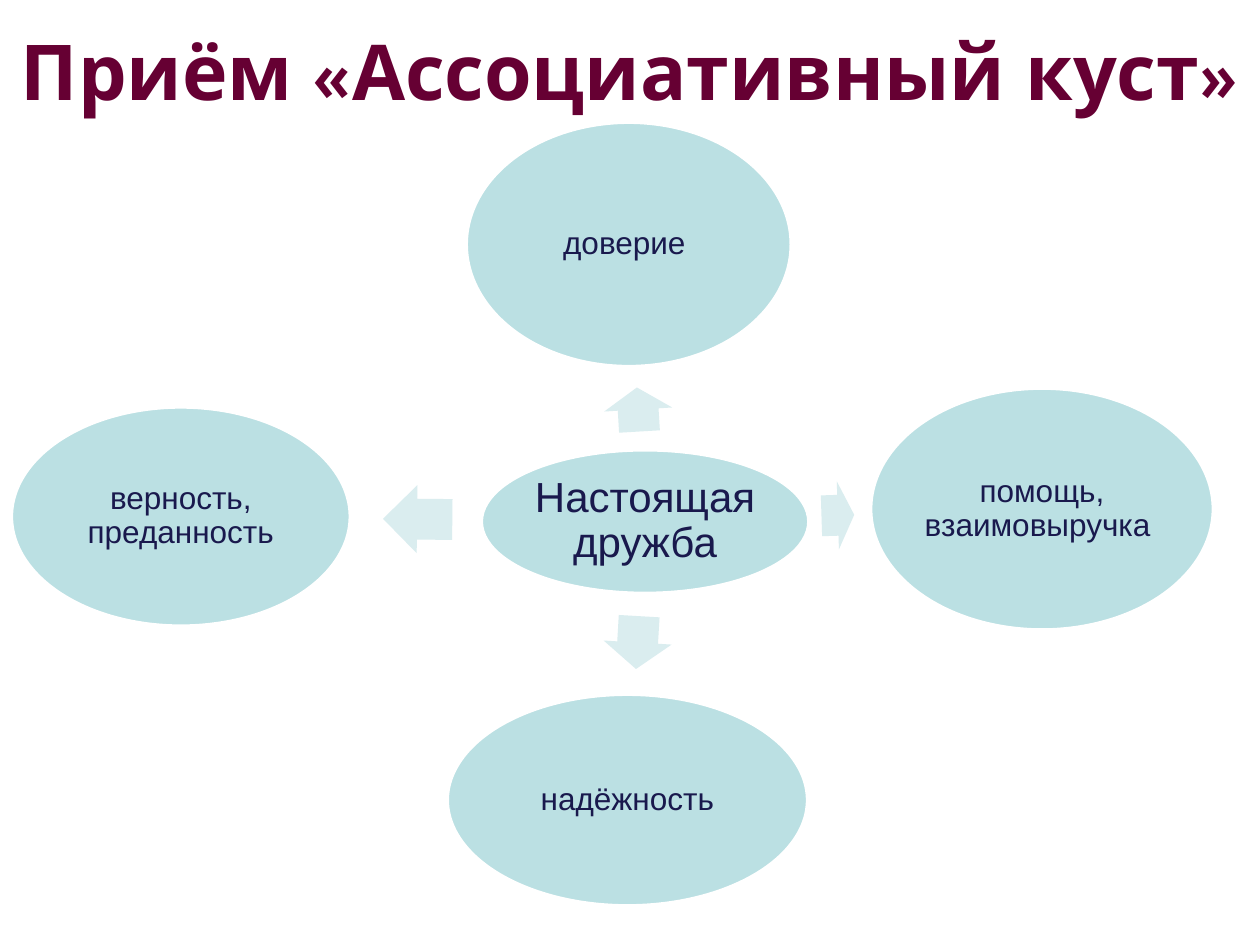
import pptx
import pptx.util
import pptx.dml.color
import pptx.enum.shapes
import pptx.enum.text

PX = 9144
KIND = pptx.enum.shapes.MSO_SHAPE
MID = pptx.enum.text.MSO_ANCHOR.MIDDLE
CENTER = pptx.enum.text.PP_ALIGN.CENTER

HUB = ("Настоящая дружба", (373, 260, 260, 114))
RAYS = [
    ("доверие ", (361, 0, 258, 194), (480, 201, 35, 54), 266.6),
    ("помощь, взаимовыручка ", (682, 211, 272, 192), (643, 285, 26, 54), 358.2),
    ("надёжность", (346, 454, 286, 168), (476, 386, 42, 54), 93.4),
    ("верность, преданность", (0, 226, 269, 174), (295, 288, 55, 54), 180.6),
]


def px(*nums):
    return [pptx.util.Emu(num * PX) for num in nums]


def tint(code):
    return pptx.dml.color.RGBColor.from_string(code)


def style(para, face, size, code, bold=False):
    para.alignment = CENTER
    for run in para.runs:
        font = run.font
        font.name, font.size, font.bold = face, pptx.util.Pt(size), bold
        font.color.rgb = tint(code)


def add_part(group, kind, box, spot, fill):
    left, top, wide, high = spot
    part = group.shapes.add_shape(
        kind, *px(box[0] + left, box[1] + top, wide, high))
    part.shadow.inherit = False
    part.fill.solid()
    part.fill.fore_color.rgb = tint(fill)
    return part


def add_oval(group, box, spot, text, size):
    oval = add_part(group, KIND.OVAL, box, spot, "BBE0E3")
    oval.line.color.rgb = tint("FFFFFF")
    oval.line.width = pptx.util.Pt(2)
    frame = oval.text_frame
    frame.word_wrap = True
    frame.vertical_anchor = MID
    frame.margin_left, frame.margin_right = px(3, 3)
    frame.margin_top, frame.margin_bottom = px(3, 3)
    frame.text = text
    para = frame.paragraphs[0]
    para.line_spacing = 0.9
    style(para, "Arial", size, "19194D")


def add_arrow(group, box, spot, turn):
    arrow = add_part(group, KIND.RIGHT_ARROW, box, spot, "DAEDEF")
    arrow.line.fill.background()
    arrow.adjustments[0] = 0.6
    arrow.adjustments[1] = 0.5
    arrow.rotation = turn


def add_title(slide, box):
    title = slide.shapes.title
    title.left, title.top, title.width, title.height = px(*box)
    frame = title.text_frame
    frame.word_wrap = True
    frame.auto_size = pptx.enum.text.MSO_AUTO_SIZE.NONE
    frame.vertical_anchor = MID
    frame.text = "Приём «Ассоциативный куст»"
    style(frame.paragraphs[0], "League Spartan", 44, "660033", True)


def add_bush(slide, box):
    group = slide.shapes.add_group_shape()
    text, spot = HUB
    add_oval(group, box, spot, text, 24)
    for text, spot, gap, turn in RAYS:
        add_arrow(group, box, gap, turn)
        add_oval(group, box, spot, text, 18)


def main():
    deck = pptx.Presentation()
    deck.slide_width, deck.slide_height = px(1000, 750)
    slide = deck.slides.add_slide(deck.slide_layouts[5])
    add_title(slide, (0, 19, 1000, 73))
    add_bush(slide, (9, 97))
    deck.save("out.pptx")


if __name__ == "__main__":
    main()
